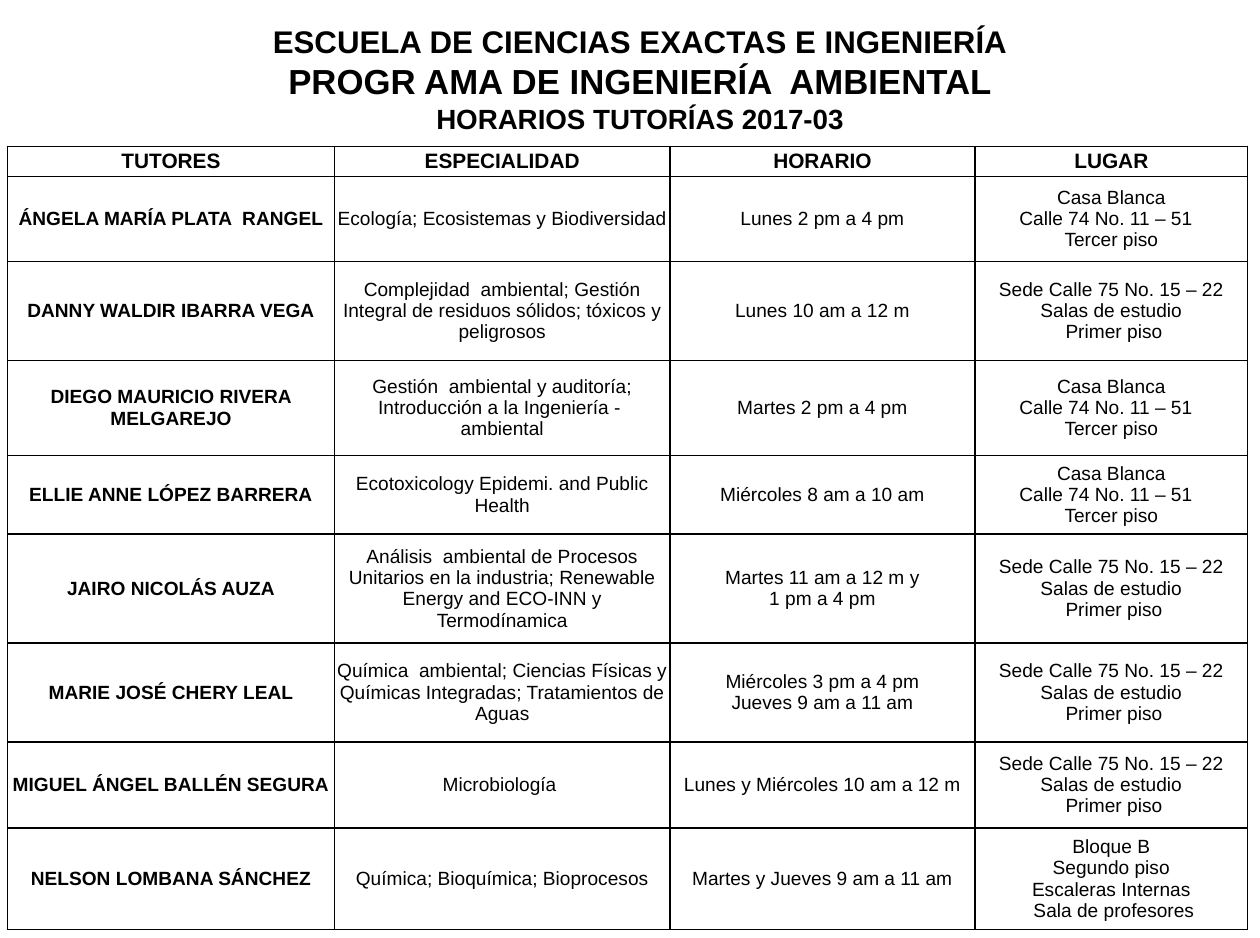
from lxml import etree
from pptx import Presentation
from pptx import util as u
from pptx.dml.color import RGBColor
from pptx.enum import text
from pptx.oxml import ns

BLACK = RGBColor(0, 0, 0)
FONT = "Arial"

HEADING = [
    ("ESCUELA DE CIENCIAS EXACTAS E INGENIERÍA", 18),
    ("PROGR AMA DE INGENIERÍA  AMBIENTAL", 20),
    ("HORARIOS TUTORÍAS 2017-03", 16),
]
CASA_BLANCA = "Casa Blanca\nCalle 74 No. 11 – 51  \nTercer piso"
SEDE_75 = "Sede Calle 75 No. 15 – 22\n Salas de estudio \n Primer piso"
BLOQUE_B = "Bloque B\n Segundo piso \nEscaleras Internas\n  Sala de profesores "

COLUMNS = [("TUTORES", 6.65), ("ESPECIALIDAD", 6.81), ("HORARIO", 6.2), ("LUGAR", 5.54)]
HEADER_HEIGHT = 0.61
# Row height in cm, then tutor, speciality, timetable and place
TUTORS = [
    (1.73, "ÁNGELA MARÍA PLATA  RANGEL", "Ecología; Ecosistemas y Biodiversidad",
     "Lunes 2 pm a 4 pm", CASA_BLANCA),
    (2.01, "DANNY WALDIR IBARRA VEGA",
     "Complejidad  ambiental; Gestión Integral de residuos sólidos; tóxicos y peligrosos",
     "Lunes 10 am a 12 m", SEDE_75),
    (1.93, "DIEGO MAURICIO RIVERA MELGAREJO",
     "Gestión  ambiental y auditoría; Introducción a la Ingeniería -  ambiental",
     "Martes 2 pm a 4 pm", CASA_BLANCA),
    (1.6, "ELLIE ANNE LÓPEZ BARRERA", "Ecotoxicology Epidemi. and Public Health",
     "Miércoles 8 am a 10 am", CASA_BLANCA),
    (2.21, "JAIRO NICOLÁS AUZA",
     "Análisis  ambiental de Procesos Unitarios en la industria; "
     "Renewable Energy and ECO-INN y Termodínamica",
     "Martes 11 am a 12 m y\n1 pm a 4 pm", SEDE_75),
    (2.01, "MARIE JOSÉ CHERY LEAL",
     "Química  ambiental; Ciencias Físicas y Químicas Integradas; Tratamientos de Aguas",
     "Miércoles 3 pm a 4 pm\nJueves 9 am a 11 am", SEDE_75),
    (1.75, "MIGUEL ÁNGEL BALLÉN SEGURA", "Microbiología ",
     "Lunes y Miércoles 10 am a 12 m", SEDE_75),
    (2.06, "NELSON LOMBANA SÁNCHEZ", "Química; Bioquímica; Bioprocesos",
     "Martes y Jueves 9 am a 11 am", BLOQUE_B),
]


def write_text(frame, lines, sizes, bold=False):
    """Fill the frame with one centred paragraph per line and size."""
    for index, (line, size) in enumerate(zip(lines, sizes)):
        paragraph = frame.add_paragraph() if index else frame.paragraphs[0]
        paragraph.alignment = text.PP_ALIGN.CENTER
        run = paragraph.add_run()
        run.text = line
        run.font.name, run.font.size, run.font.bold = FONT, u.Pt(size), bold
        run.font.color.rgb = BLACK


def add_borders(cell, width=1):
    properties = cell._tc.get_or_add_tcPr()
    for side in ("a:lnL", "a:lnR", "a:lnT", "a:lnB"):
        border = etree.SubElement(properties, ns.qn(side), w=str(u.Pt(width)))
        fill = etree.SubElement(border, ns.qn("a:solidFill"))
        etree.SubElement(fill, ns.qn("a:srgbClr"), val=str(BLACK))


def fill_cell(cell, content, size, bold):
    add_borders(cell)
    cell.fill.background()
    cell.margin_left = cell.margin_right = cell.margin_top = cell.margin_bottom = 0
    cell.vertical_anchor = text.MSO_ANCHOR.MIDDLE
    lines = content.split("\n")
    write_text(cell.text_frame, lines, [size] * len(lines), bold)


def main():
    deck = Presentation()
    deck.slide_width, deck.slide_height = u.Cm(25.6), u.Cm(19.05)
    slide = deck.slides.add_slide(deck.slide_layouts[5])

    heading = slide.shapes.title
    heading.left, heading.top = u.Cm(4.8), u.Cm(0.33)
    heading.width, heading.height = u.Cm(16.41), u.Cm(2.64)
    heading.text_frame.vertical_anchor = text.MSO_ANCHOR.TOP
    heading.text_frame.auto_size = text.MSO_AUTO_SIZE.NONE
    write_text(heading.text_frame, *zip(*HEADING), bold=True)

    names, widths = zip(*COLUMNS)
    rows = [(HEADER_HEIGHT, *names), *TUTORS]
    schedule = slide.shapes.add_table(
        len(rows), len(names), u.Cm(0.15), u.Cm(2.97),
        u.Cm(sum(widths)), u.Cm(sum(row[0] for row in rows))).table
    schedule.first_row = schedule.horz_banding = False
    for column, width in zip(schedule.columns, widths):
        column.width = u.Cm(width)
    for r, (height, *contents) in enumerate(rows):
        schedule.rows[r].height = u.Cm(height)
        for c, content in enumerate(contents):
            fill_cell(schedule.cell(r, c), content,
                      size=11 if r else 12, bold=r == 0 or c == 0)

    deck.save("out.pptx")


if __name__ == "__main__":
    main()
